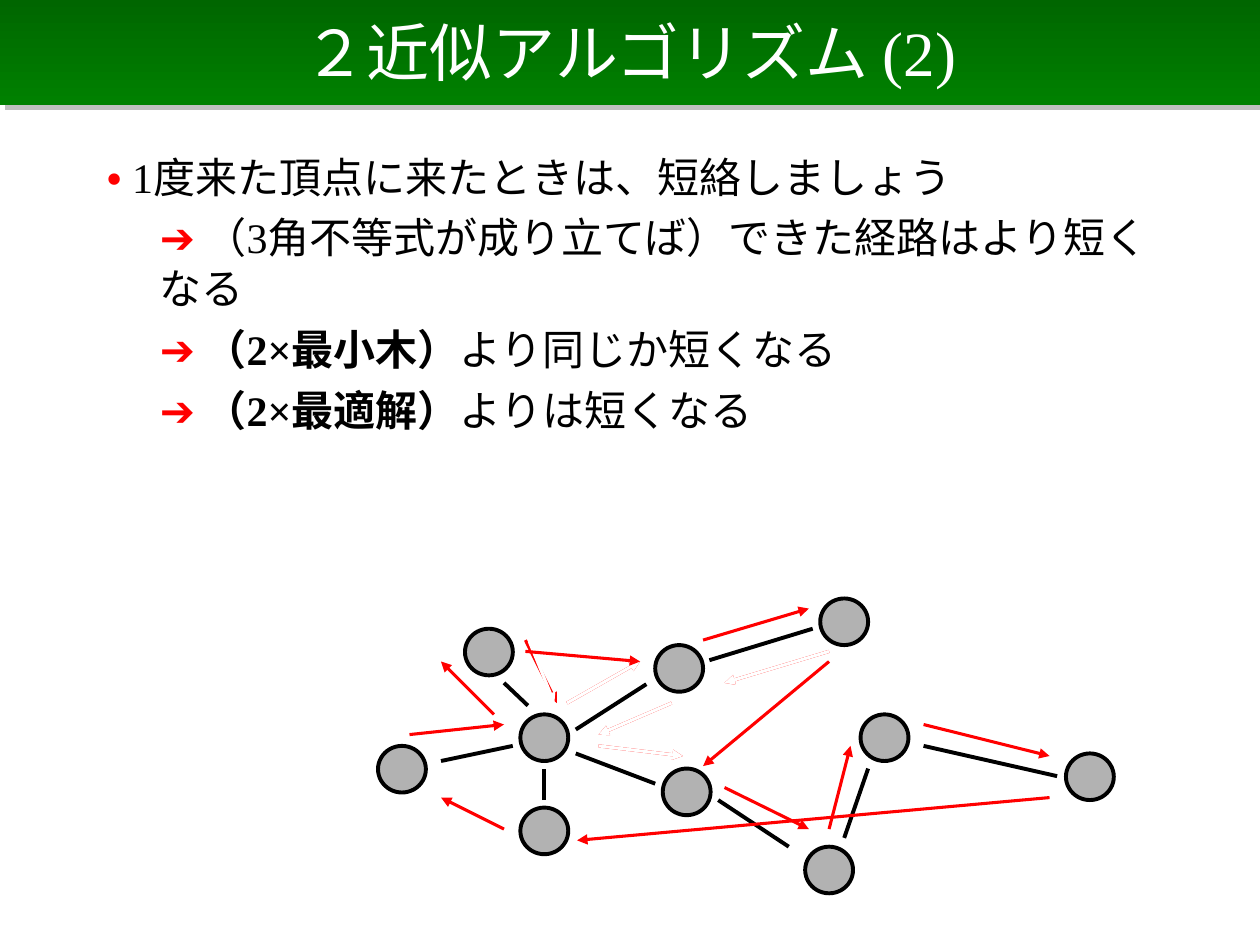
from lxml import etree
from pptx import Presentation
from pptx import util as u
from pptx.dml.color import RGBColor
from pptx.enum import shapes, text
from pptx.oxml import parse_xml
from pptx.oxml.ns import nsdecls, qn

SCALE = 9144
HUES = {"ink": "000000", "paper": "FFFFFF", "red": "FF0000", "node": "B2B2B2",
        "dark": "006600", "green": "008000", "shade": "808080"}
FONT = "Times New Roman"


def px(n):
    return u.Emu(n * SCALE)


def hue(name):
    return RGBColor.from_string(HUES[name])


def write(para, words, size=24, color="ink", bold=False):
    run = para.add_run()
    run.text = words
    font = run.font
    font.name, font.size, font.bold = FONT, u.Pt(size), bold
    font.color.rgb = hue(color)


class Deck:
    def __init__(self, wide, high):
        self.show = Presentation()
        self.show.slide_width, self.show.slide_height = px(wide), px(high)
        self.slide = self.show.slides.add_slide(self.show.slide_layouts[5])

    def title(self, words, x, y, w, h):
        box = self.slide.shapes.title
        box.left, box.top, box.width, box.height = map(px, (x, y, w, h))
        box.fill.gradient()
        box.fill.gradient_angle = 270
        for stop, name in zip(box.fill.gradient_stops, ("dark", "green")):
            stop.color.rgb = hue(name)
        box.line.fill.background()
        box._element.spPr.append(parse_xml(
            f'<a:effectLst {nsdecls("a")}><a:outerShdw dist="53340" dir="2700000">'
            f'<a:srgbClr val="{HUES["shade"]}"><a:alpha val="50000"/></a:srgbClr>'
            '</a:outerShdw></a:effectLst>'))
        frame = box.text_frame
        frame.vertical_anchor = text.MSO_ANCHOR.MIDDLE
        para = frame.paragraphs[0]
        para.alignment = text.PP_ALIGN.CENTER
        write(para, words, size=36, color="paper")

    def body(self, items, x, y, w, h):
        frame = self.slide.shapes.add_textbox(*map(px, (x, y, w, h))).text_frame
        frame.word_wrap = True
        for i, (mark, strong, plain) in enumerate(items):
            para = frame.add_paragraph() if i else frame.paragraphs[0]
            para.space_before = u.Pt(6)
            props = para._p.get_or_add_pPr()
            props.set("marL", str(px(42)))
            props.set("indent", str(px(0 if i else -42)))
            write(para, mark + " ", color="red", bold=True)
            if strong:
                write(para, strong, bold=True)
            write(para, plain)

    def node(self, x, y):
        dot = self.slide.shapes.add_shape(
            shapes.MSO_SHAPE.OVAL, *map(px, (x, y, 38, 37)))
        dot.shadow.inherit = False
        dot.fill.solid()
        dot.fill.fore_color.rgb = hue("node")
        dot.line.color.rgb = hue("ink")
        dot.line.width = u.Pt(2.25)

    def line(self, ends, color="ink", width=2.25, head=False):
        link = self.slide.shapes.add_connector(
            shapes.MSO_CONNECTOR.STRAIGHT, *map(px, ends))
        link.line.color.rgb = hue(color)
        link.line.width = u.Pt(width)
        if head:
            edge = link.line._get_or_add_ln()
            etree.SubElement(edge, qn("a:tailEnd"), type="triangle")
        etree.SubElement(link._element.spPr, qn("a:effectLst"))

    def arrow(self, ends, color="red"):
        self.line(ends, color, 1.75, True)


ITEMS = [
    ("•", "", "1度来た頂点に来たときは、短絡しましょう"),
    ("➔", "", "（3角不等式が成り立てば）できた経路はより短くなる"),
    ("➔", "（2×最小木）", "より同じか短くなる"),
    ("➔", "（2×最適解）", "よりは短くなる"),
]
NODES = [(520, 512), (526, 610), (639, 672), (683, 567), (651, 475),
         (300, 592), (846, 598), (369, 499), (413, 567), (413, 641)]
TREE = [(457, 579, 513, 543), (457, 598, 520, 622), (563, 524, 645, 499),
        (570, 635, 626, 672), (733, 592, 839, 616), (350, 604, 407, 592),
        (689, 610, 670, 665), (432, 635, 432, 610), (419, 560, 400, 542)]
OLD = [(450, 558, 508, 525), (658, 517, 575, 542),
       (533, 558, 475, 583), (475, 592, 542, 600)]
TOUR = [(325, 583, 400, 575), (392, 567, 350, 525), (417, 517, 508, 525),
        (558, 508, 642, 483), (658, 525, 558, 608), (575, 625, 642, 658),
        (658, 658, 675, 592), (733, 575, 833, 600), (833, 633, 458, 667),
        (400, 658, 350, 633)]


def main():
    deck = Deck(1000, 750)
    deck.title("２近似アルゴリズム (2)", 0, -1, 1000, 84)
    deck.body(ITEMS, 75, 115, 858, 244)
    for ends in TREE:
        deck.line(ends)
    for spot in NODES:
        deck.node(*spot)
    deck.arrow((417, 508, 442, 558))
    deck.arrow((420, 509, 440, 558), "paper")
    for color in ("red", "paper"):
        for ends in OLD:
            deck.arrow(ends, color)
    for ends in TOUR:
        deck.arrow(ends)
    deck.show.save("out.pptx")


if __name__ == "__main__":
    main()
